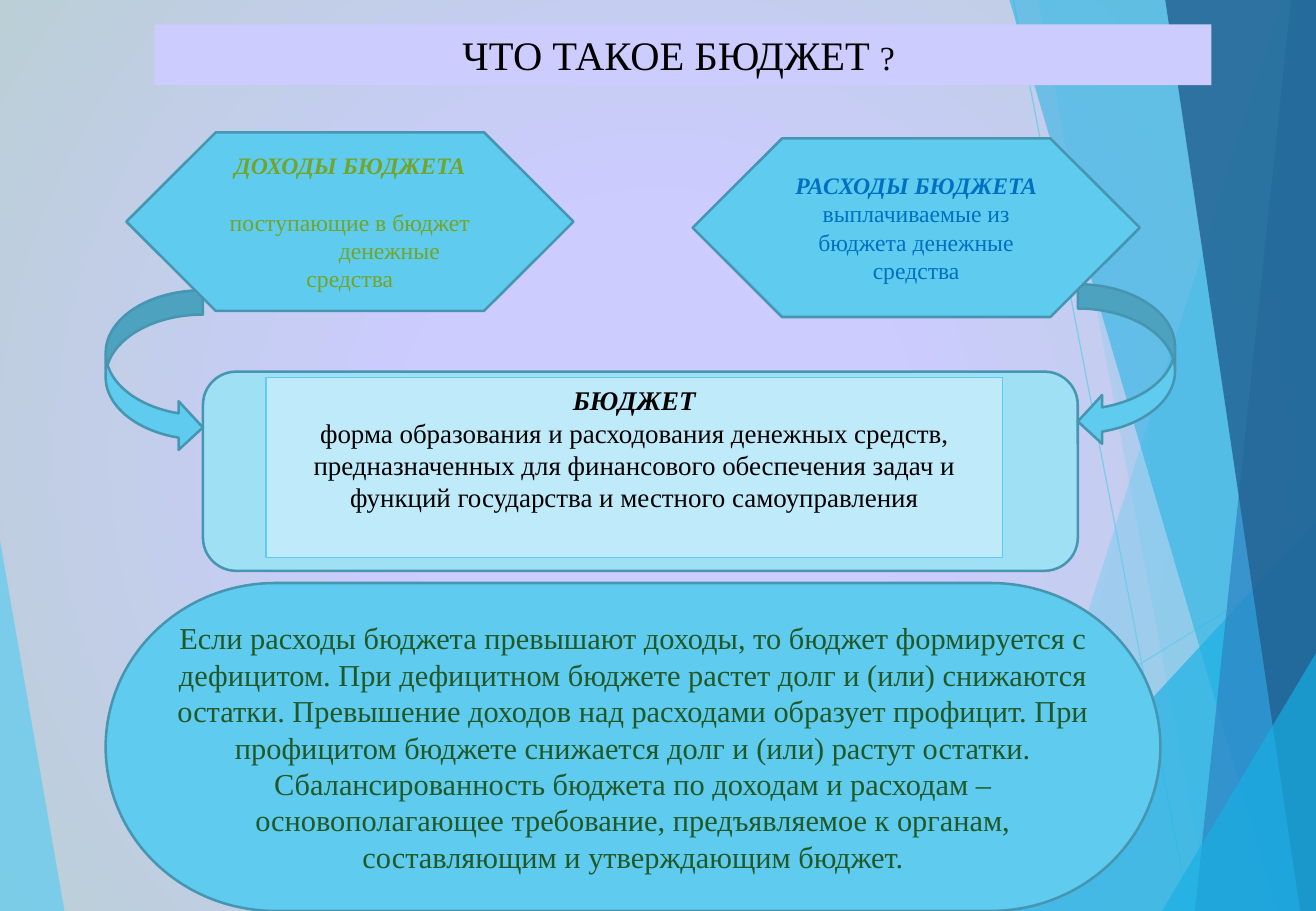
from lxml import etree
from pptx import Presentation
from pptx.dml.color import RGBColor
from pptx.enum.shapes import MSO_CONNECTOR, MSO_SHAPE
from pptx.enum.text import MSO_ANCHOR, MSO_AUTO_SIZE, PP_ALIGN
from pptx.oxml import parse_xml
from pptx.oxml.ns import qn
from pptx.util import Inches, Pt

CENTER = PP_ALIGN.CENTER
TOP, MIDDLE = MSO_ANCHOR.TOP, MSO_ANCHOR.MIDDLE
NO_AUTOFIT = MSO_AUTO_SIZE.NONE
STRAIGHT = MSO_CONNECTOR.STRAIGHT
RECTANGLE = MSO_SHAPE.RECTANGLE
ROUNDED = MSO_SHAPE.ROUNDED_RECTANGLE
HEXAGON = MSO_SHAPE.FLOWCHART_PREPARATION
TERMINATOR = MSO_SHAPE.FLOWCHART_TERMINATOR
RIGHT_ARROW = MSO_SHAPE.CURVED_RIGHT_ARROW
LEFT_ARROW = MSO_SHAPE.CURVED_LEFT_ARROW

WIDTH, HEIGHT = Inches(10.83), Inches(7.5)
FONT = "Times New Roman"
LAVENDER, MIST = "CCCCFF", "BACFD6"
SKY, AZURE, BLUE, NAVY = "5FCBEF", "17B0E4", "2E83C3", "226292"
OUTLINE, PALE, PALEST = "4696B1", "9FE0F5", "BFEAF9"
BLACK, INCOME, EXPENSE, GREEN = "000000", "72A528", "0070C0", "215828"

FACETS = [
    ((0, 59.3), 4.9, 0, SKY, 70),
    ((97.5, 0), 75.44, 100, SKY, 36),
    ((78.9, 0), 91.97, 100, SKY, 20),
    ((100, 57.2), 72.6, 100, AZURE, 66),
    ((76.7, 0), 97.05, 100, AZURE, 50),
    ((98.1, 0), 90.8, 100, BLUE, 70),
    ((88.55, 0), 98.8, 100, NAVY, 82),
    ((100, 71.7), 88.3, 100, AZURE, 66),
]
RAYS = [((56.14, 100), (100, 61)), ((77, 0), (90.4, 100))]

BUDGET = ("форма образования и расходования денежных средств, предназначенных для "
          "финансового обеспечения задач и функций государства и местного самоуправления")
BALANCE = ("Если расходы бюджета превышают доходы, то бюджет формируется с дефицитом. "
           "При дефицитном бюджете растет долг и (или) снижаются остатки. Превышение "
           "доходов над расходами образует профицит. При профицитом бюджете снижается "
           "долг и (или) растут остатки. Сбалансированность бюджета по доходам и "
           "расходам – основополагающее требование, предъявляемое к органам, "
           "составляющим и утверждающим бюджет.")


def color(value):
    """Turn a hex string into a colour."""
    return RGBColor.from_string(value)


def across(share):
    """Give a percentage of the slide width."""
    return int(WIDTH * share / 100)


def down(share):
    """Give a percentage of the slide height."""
    return int(HEIGHT * share / 100)


def set_opacity(shape, percent):
    """Make the colours of a shape partly transparent."""
    for node in shape.element.spPr.xpath(".//a:srgbClr"):
        etree.SubElement(node, qn("a:alpha")).set("val", str(percent * 1000))


def set_background(slide):
    """Fill the slide with a gradient that spreads from its centre."""
    slide.background.fill.solid()
    solid = slide.element.xpath(".//p:bgPr/a:solidFill")[0]
    stops = "".join(f'<a:gs pos="{place}000"><a:srgbClr val="{value}"/></a:gs>'
                    for place, value in ((30, LAVENDER), (100, MIST)))
    gradient = parse_xml(
        '<a:gradFill xmlns:a="http://schemas.openxmlformats.org/drawingml/2006/main" '
        f'rotWithShape="1"><a:gsLst>{stops}</a:gsLst><a:path path="circle">'
        '<a:fillToRect l="50000" t="50000" r="50000" b="50000"/></a:path></a:gradFill>')
    solid.getparent().replace(solid, gradient)


def add_facet(slide, start, foot, edge, fill, opacity):
    """Add a translucent facet between a slanted side and a slide edge."""
    points = [start, (foot, 100), (edge, 100), (edge, start[1])]
    corners = [(across(x), down(y)) for x, y in points]
    builder = slide.shapes.build_freeform(*corners[0], scale=1.0)
    builder.add_line_segments(corners[1:], close=True)
    facet = builder.convert_to_shape()
    facet.shadow.inherit = False
    facet.fill.solid()
    facet.fill.fore_color.rgb = color(fill)
    facet.line.fill.background()
    set_opacity(facet, opacity)


def add_ray(slide, start, end):
    """Add a thin translucent line."""
    ray = slide.shapes.add_connector(
        STRAIGHT, across(start[0]), down(start[1]), across(end[0]), down(end[1]))
    ray.line.color.rgb = color(SKY)
    ray.line.width = Pt(0.75)
    set_opacity(ray, 70)
    etree.SubElement(ray.element.spPr, qn("a:effectLst"))


def add_box(slide, kind, box, fill=SKY, line=OUTLINE, width=1.5):
    """Add an outlined preset shape placed by shares of the slide."""
    left, top, wide, high = box
    shape = slide.shapes.add_shape(kind, across(left), down(top), across(wide), down(high))
    shape.shadow.inherit = False
    shape.fill.solid()
    shape.fill.fore_color.rgb = color(fill)
    shape.line.color.rgb = color(line)
    shape.line.width = Pt(width)
    return shape


def add_run(paragraph, text, size, ink, strong=False):
    """Add one run, bold and italic when strong."""
    run = paragraph.add_run()
    run.text = text
    run.font.name = FONT
    run.font.size = Pt(size)
    run.font.bold = run.font.italic = strong
    run.font.color.rgb = color(ink)


def write(shape, paragraphs, ink, anchor=MIDDLE):
    """Write centred paragraphs, each a list of text, size and strength."""
    frame = shape.text_frame
    frame.word_wrap = True
    frame.auto_size = NO_AUTOFIT
    frame.vertical_anchor = anchor
    for index, runs in enumerate(paragraphs):
        paragraph = frame.add_paragraph() if index else frame.paragraphs[0]
        paragraph.alignment = CENTER
        for text, size, strong in runs:
            add_run(paragraph, text, size, ink, strong)
    return frame


def add_title(slide):
    """Move the title to the front and format it as a banner."""
    title = slide.shapes.title
    title.element.getparent().append(title.element)
    title.left, title.top = across(11.73), down(2.67)
    title.width, title.height = across(80.33), down(6.67)
    title.fill.solid()
    title.fill.fore_color.rgb = color(LAVENDER)
    write(title, [[("ЧТО ТАКОЕ БЮДЖЕТ ", 24, False), ("? ", 20, False)]], BLACK)


def add_flows(slide):
    """Add the income and expense hexagons."""
    expense = add_box(slide, HEXAGON, (52.63, 15.2, 33.98, 19.6))
    write(expense, [[("РАСХОДЫ БЮДЖЕТА ", 14, True),
                     ("выплачиваемые из бюджета денежные средства", 14, False)]], EXPENSE)
    income = add_box(slide, HEXAGON, (9.6, 14.53, 33.98, 19.6))
    frame = write(income, [[("ДОХОДЫ БЮДЖЕТА", 14, True)],
                           [("поступающие в бюджет", 14, False)],
                           [("денежные", 14, False)],
                           [("средства", 14, False)]], INCOME)
    frame.margin_left = frame.margin_right = Inches(0.05)
    heading, _, indented, _ = frame.paragraphs
    heading.space_after = Pt(17)
    indented._p.get_or_add_pPr().set("marL", str(across(6)))


def main():
    """Build the slide and save it."""
    presentation = Presentation()
    presentation.slide_width, presentation.slide_height = WIDTH, HEIGHT
    slide = presentation.slides.add_slide(presentation.slide_layouts[5])
    set_background(slide)
    for ray in RAYS:
        add_ray(slide, *ray)
    for facet in FACETS:
        add_facet(slide, *facet)
    add_title(slide)
    add_box(slide, ROUNDED, (15.42, 40.8, 66.48, 21.87), PALE)
    budget = add_box(slide, RECTANGLE, (20.22, 41.47, 55.96, 19.73), PALEST, SKY, 0.75)
    write(budget, [[("БЮДЖЕТ", 16, True)], [(BUDGET, 16, False)]], BLACK, TOP)
    add_box(slide, RIGHT_ARROW, (8.03, 31.87, 7.39, 17.73))
    add_box(slide, LEFT_ARROW, (81.9, 31.2, 7.39, 17.73))
    add_flows(slide)
    balance = add_box(slide, TERMINATOR, (8.03, 64, 80.15, 36))
    write(balance, [[(BALANCE, 18, False)]], GREEN)
    presentation.save("out.pptx")


if __name__ == "__main__":
    main()
